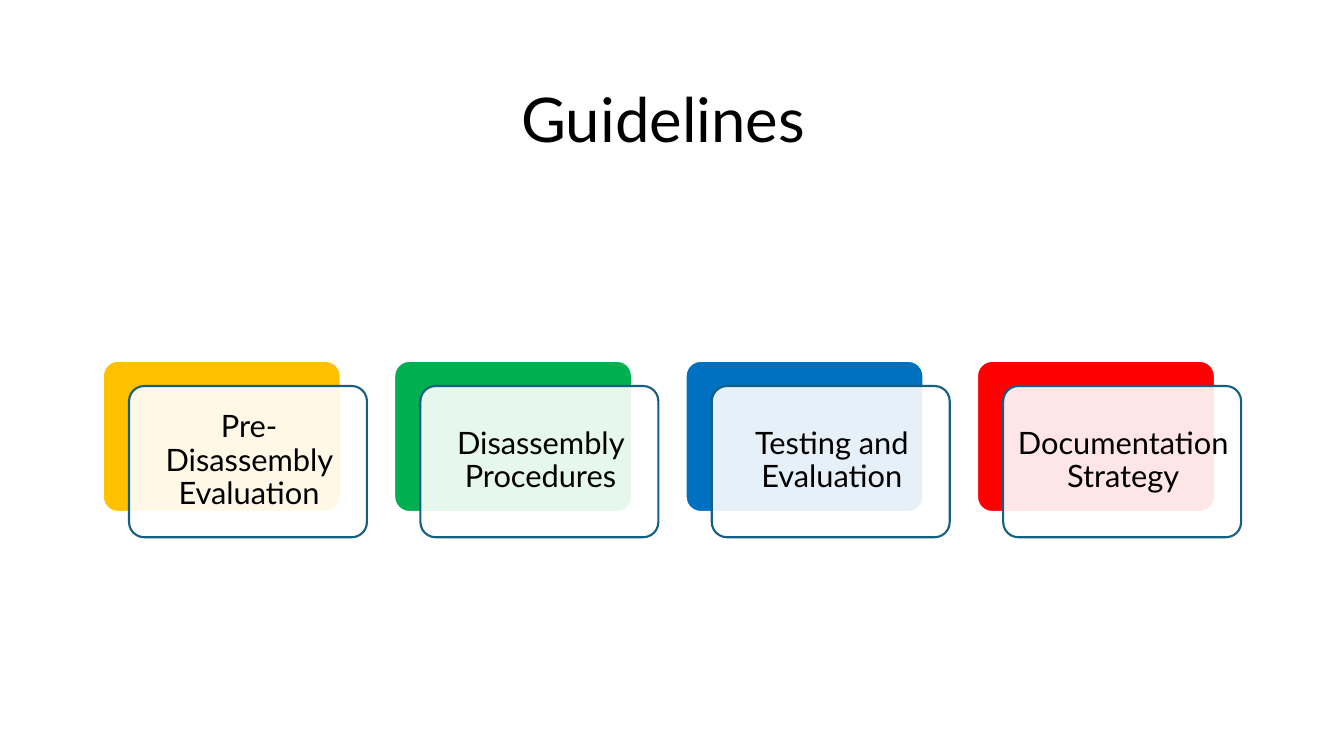
from dataclasses import dataclass

from lxml import etree
from pptx import Presentation
from pptx import util as u
from pptx.dml.color import RGBColor
from pptx.enum import shapes, text
from pptx.oxml import ns

EMU_PER_PX = 9144  # 100 px to the inch
FONT = "Lato"
WHITE = RGBColor(0xFF, 0xFF, 0xFF)
BLACK = RGBColor(0x00, 0x00, 0x00)
OUTLINE = RGBColor(0x15, 0x60, 0x82)
AMBER = RGBColor(0xFF, 0xC0, 0x00)
GREEN = RGBColor(0x00, 0xB0, 0x50)
BLUE = RGBColor(0x00, 0x70, 0xC0)
RED = RGBColor(0xFF, 0x00, 0x00)

CARD_LEFT, CARD_TOP, CARD_PITCH = 102, 358, 289
CARD_WIDTH, CARD_HEIGHT = 236, 150
FRONT_DX, FRONT_DY = 26, 25  # front card against back card
LABEL_DX, LABEL_DY = 31, 29  # label against back card


@dataclass(frozen=True)
class Guideline:
    label: str
    color: RGBColor


GUIDELINES = (
    Guideline("Pre-Disassembly Evaluation", AMBER),
    Guideline("Disassembly Procedures", GREEN),
    Guideline("Testing and Evaluation", BLUE),
    Guideline("Documentation Strategy", RED),
)


def px(length: int) -> u.Emu:
    return u.Emu(length * EMU_PER_PX)


def add_text(container, content: str, left: int, top: int, width: int, height: int,
             *, size: int, inset: int, right_inset: int) -> None:
    box = container.add_textbox(px(left), px(top), px(width), px(height))
    frame = box.text_frame
    frame.word_wrap = True
    frame.vertical_anchor = text.MSO_ANCHOR.MIDDLE
    frame.margin_left = frame.margin_top = frame.margin_bottom = px(inset)
    frame.margin_right = px(right_inset)
    paragraph = frame.paragraphs[0]
    paragraph.alignment = text.PP_ALIGN.CENTER
    paragraph.line_spacing = 0.9
    run = paragraph.add_run()
    run.text = content
    run.font.name = FONT
    run.font.size = u.Pt(size)
    run.font.color.rgb = BLACK


def add_card(container, left: int, top: int, *, fill: RGBColor, line: RGBColor,
             opacity: int = 100) -> None:
    card = container.add_shape(shapes.MSO_SHAPE.ROUNDED_RECTANGLE, px(left), px(top),
                               px(CARD_WIDTH), px(CARD_HEIGHT))
    card.shadow.inherit = False
    card.adjustments[0] = 0.1
    card.fill.solid()
    card.fill.fore_color.rgb = fill
    card.line.color.rgb = line
    card.line.width = u.Pt(1.5)
    if opacity < 100:
        color = card.fill._xPr.find(ns.qn("a:solidFill"))[0]
        etree.SubElement(color, ns.qn("a:alpha"), val=str(opacity * 1000))


def add_guideline(container, guideline: Guideline, left: int) -> None:
    add_card(container, left, CARD_TOP, fill=guideline.color, line=WHITE)
    add_card(container, left + FRONT_DX, CARD_TOP + FRONT_DY,
             fill=WHITE, line=OUTLINE, opacity=90)
    add_text(container, guideline.label, left + LABEL_DX, CARD_TOP + LABEL_DY, 228, 141,
             size=22, inset=9, right_inset=9)


def main() -> None:
    presentation = Presentation()
    presentation.slide_width, presentation.slide_height = px(1333), px(750)
    slide = presentation.slides.add_slide(presentation.slide_layouts[6])

    # Title, set slightly left of the middle of its box
    add_text(slide.shapes, "Guidelines", 167, 60, 1002, 124,
             size=44, inset=10, right_inset=30)

    # Row of guideline cards
    diagram = slide.shapes.add_group_shape().shapes
    for index, guideline in enumerate(GUIDELINES):
        add_guideline(diagram, guideline, CARD_LEFT + index * CARD_PITCH)

    presentation.save("out.pptx")


if __name__ == "__main__":
    main()
